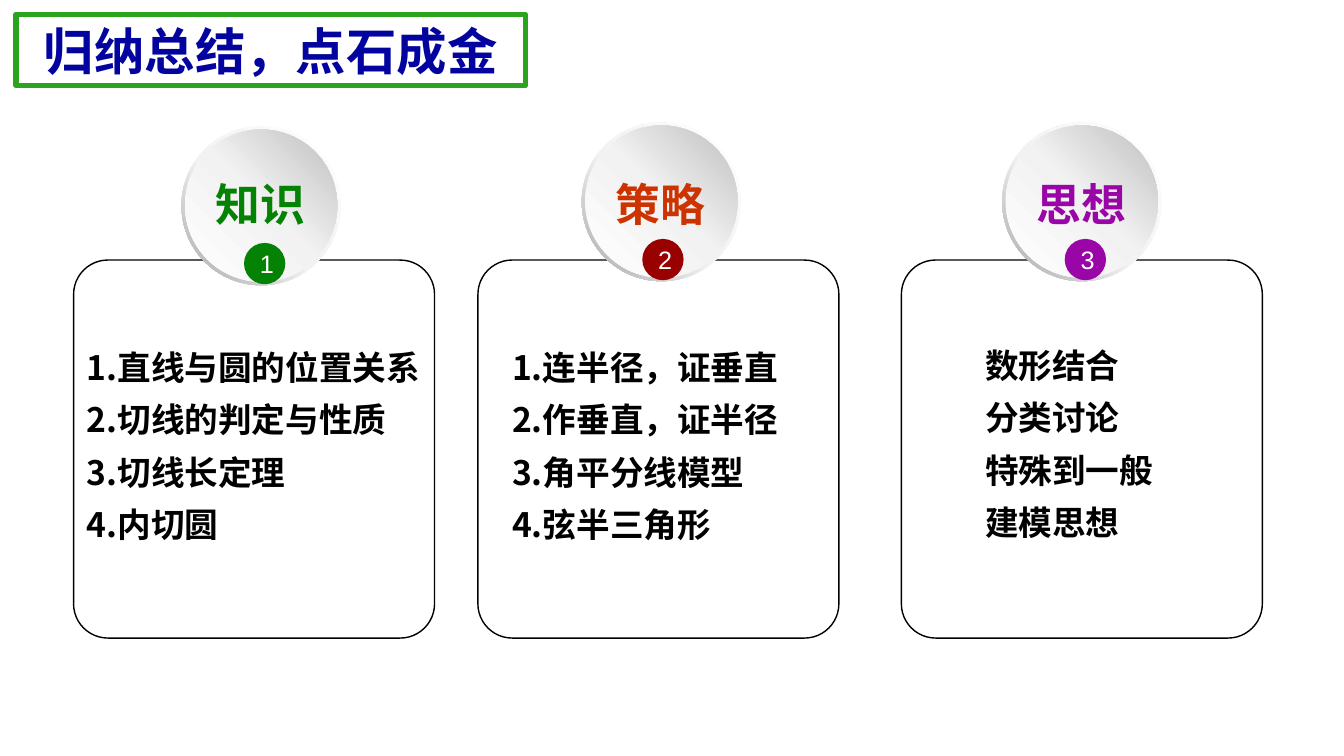
import copy

import pptx
import pptx.dml.color
import pptx.enum.shapes
import pptx.enum.text
import pptx.oxml
import pptx.oxml.ns
import pptx.util

Inches = pptx.util.Inches
SHAPES = pptx.enum.shapes.MSO_SHAPE
ALIGN = pptx.enum.text.PP_ALIGN
ANCHOR = pptx.enum.text.MSO_ANCHOR
CJK_FONT = "Noto Sans CJK SC"

CARD_TOP, CARD_WIDTH, CARD_HEIGHT = 2.58, 3.58, 3.75
DISC_SIZE, DISC_RIM, BADGE_SIZE = 1.58, 0.035, 0.41

# heading, colours of heading and badge, card left, disc left and top,
# badge left, list box (left, top, width), list lines
COLUMNS = [
    ("知识", "048204", "048204", 0.73, (1.8, 1.25), 2.42, (0.86, 3.32, 3.44),
     ["1.直线与圆的位置关系", "2.切线的判定与性质", "3.切线长定理", "4.内切圆"]),
    ("策略", "CC3300", "990000", 4.74, (5.77, 1.21), 6.37, (5.08, 3.32, 3.09),
     ["1.连半径，证垂直", "2.作垂直，证半径", "3.角平分线模型", "4.弦半三角形"]),
    ("思想", "9A05A7", "9A05A7", 8.94, (9.94, 1.21), 10.56, (9.77, 3.3, 2.11),
     ["数形结合", "分类讨论", "特殊到一般", "建模思想"]),
]


def color(value):
    return pptx.dml.color.RGBColor.from_string(value)


def add_plain_shape(slide, kind, left, top, width, height, adjustment=None):
    """Add a shape with no shadow, fill or line."""
    shape = slide.shapes.add_shape(
        kind, Inches(left), Inches(top), Inches(width), Inches(height))
    shape.shadow.inherit = False
    shape.fill.background()
    shape.line.fill.background()
    if adjustment is not None:
        shape.adjustments[0] = adjustment
    return shape


def set_outline(shape, value, width):
    shape.line.color.rgb = color(value)
    shape.line.width = pptx.util.Pt(width)


def set_gradient(shape, stops, angle):
    """Fill with three stops; the angle runs counter-clockwise."""
    shape.fill.gradient()
    shape.fill.gradient_angle = angle
    stop_list = shape.element.spPr.find(".//" + pptx.oxml.ns.qn("a:gsLst"))
    stop_list.append(copy.deepcopy(stop_list[0]))
    for stop, (position, value) in zip(shape.fill.gradient_stops, stops):
        stop.position = position
        stop.color.rgb = color(value)


def write(shape, text, size, value, font=CJK_FONT, bold=True, align=ALIGN.LEFT,
          spacing=None):
    shape.text_frame.text = text
    for paragraph in shape.text_frame.paragraphs:
        paragraph.alignment = align
        if spacing:
            paragraph.line_spacing = spacing
        for run in paragraph.runs:
            run.font.size = pptx.util.Pt(size)
            run.font.bold = bold
            run.font.color.rgb = color(value)
            run.font.name = font
    for properties in shape.element.findall(".//" + pptx.oxml.ns.qn("a:rPr")):
        properties.append(pptx.oxml.parse_xml(
            f'<a:ea {pptx.oxml.ns.nsdecls("a")} typeface="{font}"/>'))


def add_title(slide, left, top, width, height):
    title = add_plain_shape(slide, SHAPES.RECTANGLE, left, top, width, height)
    set_outline(title, "2CA31F", 3.75)
    title.text_frame.vertical_anchor = ANCHOR.MIDDLE
    write(title, "归纳总结，点石成金", 36, "03039F", align=ALIGN.CENTER)


def add_disc(slide, left, top):
    """Draw a shaded disc inside a thin rim."""
    rim = add_plain_shape(slide, SHAPES.DONUT, left, top, DISC_SIZE, DISC_SIZE, 0.049)
    set_gradient(rim, [(0, "FFFFFF"), (0.55, "F2F2F2"), (1, "A6A6A6")], 225)
    size = DISC_SIZE - 2 * DISC_RIM
    face = add_plain_shape(
        slide, SHAPES.OVAL, left + DISC_RIM, top + DISC_RIM, size, size)
    set_gradient(face, [(0, "FFFFFF"), (0.51, "F2F2F2"), (1, "BFBFBF")], 45)


def add_badge(slide, number, value, left, top):
    badge = add_plain_shape(slide, SHAPES.OVAL, left, top, BADGE_SIZE, BADGE_SIZE)
    badge.fill.solid()
    badge.fill.fore_color.rgb = color(value)
    badge.text_frame.vertical_anchor = ANCHOR.MIDDLE
    write(badge, str(number), 18, "FFFFFF", "Arial", False, ALIGN.CENTER)


def add_column(slide, number, heading, heading_color, badge_color, card_left,
               disc, badge_left, list_box, lines):
    card = add_plain_shape(slide, SHAPES.ROUNDED_RECTANGLE, card_left, CARD_TOP,
                           CARD_WIDTH, CARD_HEIGHT, 0.095)
    set_outline(card, "000000", 1)

    disc_left, disc_top = disc
    add_disc(slide, disc_left, disc_top)
    add_badge(slide, number, badge_color, badge_left, disc_top + 1.16)

    label = slide.shapes.add_textbox(
        Inches(disc_left + 0.24), Inches(1.7), Inches(1.09), Inches(0.64))
    label.text_frame.word_wrap = False
    write(label, heading, 32, heading_color)

    left, top, width = list_box
    items = slide.shapes.add_textbox(
        Inches(left), Inches(top), Inches(width), Inches(2.1))
    frame = items.text_frame
    frame.word_wrap = True
    frame.margin_left = frame.margin_right = 0
    frame.margin_top = frame.margin_bottom = 0
    write(items, "\n".join(lines), 24, "000000", spacing=1.3)


def main():
    presentation = pptx.Presentation()
    presentation.slide_width = Inches(13.33)
    presentation.slide_height = Inches(7.5)
    slide = presentation.slides.add_slide(presentation.slide_layouts[6])
    add_title(slide, 0.16, 0.14, 5.05, 0.71)
    for number, column in enumerate(COLUMNS, 1):
        add_column(slide, number, *column)
    presentation.save("out.pptx")


if __name__ == "__main__":
    main()
